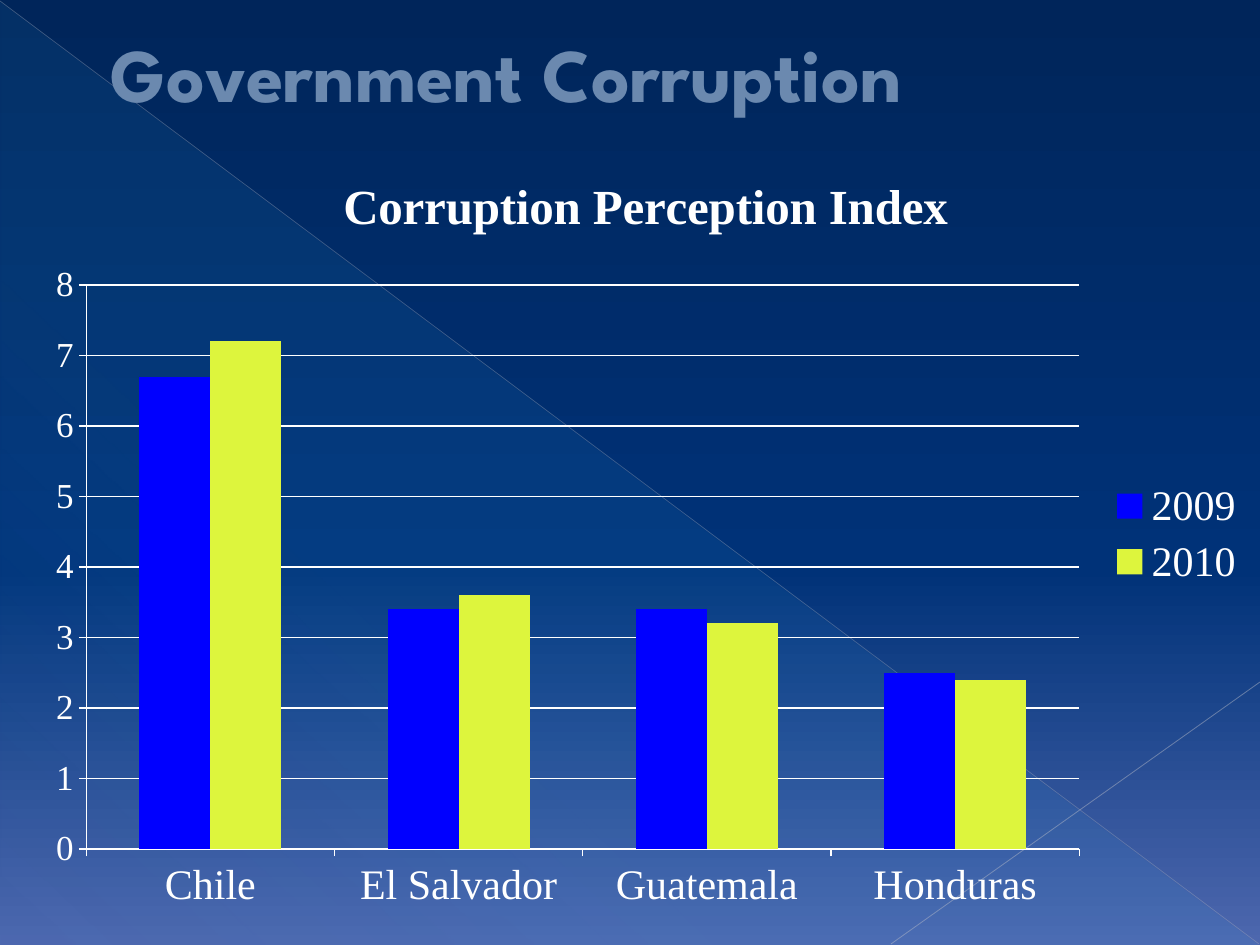
from lxml.etree import SubElement
from pptx import Presentation
from pptx.chart.data import CategoryChartData
from pptx.dml.color import RGBColor
from pptx.enum.chart import XL_CHART_TYPE, XL_LEGEND_POSITION, XL_TICK_MARK
from pptx.enum.shapes import MSO_CONNECTOR, MSO_SHAPE
from pptx.enum.text import MSO_ANCHOR, MSO_AUTO_SIZE, PP_ALIGN
from pptx.oxml import parse_xml
from pptx.oxml.ns import nsdecls, qn
from pptx.util import Emu, Pt

EMU_PER_PX = 914400 / 126
HEADING_FONT = "League Spartan"
CHART_FONT = "Times New Roman"
COLORS = {
    "navy": "00255A",
    "royal": "003278",
    "periwinkle": "4D67AE",
    "sky": "38ABED",
    "long_line": "B0B5C3",
    "short_line": "B9BDC9",
    "title": "6B89AF",
    "title_edge": "083E5D",
    "white": "FFFFFF",
    "blue": "0000FF",
    "lime": "DDF53D",
}
COUNTRIES = ["Chile", "El Salvador", "Guatemala", "Honduras"]
SERIES = [
    ("2009", [6.7, 3.4, 3.4, 2.5], "blue"),
    ("2010", [7.2, 3.6, 3.2, 2.4], "lime"),
]


def px(length):
    """Turn pixels into EMU."""
    return Emu(round(length * EMU_PER_PX))


def color(name):
    """Look up a named colour."""
    return RGBColor.from_string(COLORS[name])


def set_alpha(element, percent):
    """Set the opacity of the first colour inside an element."""
    value = element.find(".//" + qn("a:srgbClr"))
    SubElement(value, qn("a:alpha"), val=str(percent * 1000))


def set_gradient(fill, element, stops, angle):
    """Fill with a linear gradient of (position, colour, opacity) stops."""
    fill.gradient()
    gradient = element.find(".//" + qn("a:gradFill"))
    for child in list(gradient):
        gradient.remove(child)
    stop_list = SubElement(gradient, qn("a:gsLst"))
    for position, name, opacity in stops:
        stop = SubElement(stop_list, qn("a:gs"), pos=str(position * 1000))
        SubElement(stop, qn("a:srgbClr"), val=COLORS[name])
        if opacity < 100:
            set_alpha(stop, opacity)
    SubElement(gradient, qn("a:lin"), ang=str(angle * 60000), scaled="0")


def format_font(font, size, name=CHART_FONT, fill="white", bold=False):
    """Apply a typeface, size, weight and colour."""
    font.name = name
    font.size = Pt(size)
    font.bold = bold
    font.color.rgb = color(fill)


def add_triangle(page, left, top, width, height):
    """Add the translucent corner triangle."""
    triangle = page.shapes.add_shape(
        MSO_SHAPE.RIGHT_TRIANGLE, px(left), px(top), px(width), px(height)
    )
    triangle.shadow.inherit = False
    triangle.line.fill.background()
    stops = [(0, "sky", 10), (70, "sky", 8), (100, "sky", 1)]
    set_gradient(triangle.fill, triangle._element.spPr, stops, 133)


def add_line(page, start, end, name, width, opacity):
    """Add a translucent straight line."""
    line = page.shapes.add_connector(
        MSO_CONNECTOR.STRAIGHT, *map(px, start), *map(px, end)
    )
    line.line.color.rgb = color(name)
    line.line.width = Pt(width)
    properties = line._element.spPr
    set_alpha(properties, opacity)
    SubElement(properties, qn("a:effectLst"))


def add_title(page, text, left, top, width, height, indent):
    """Place and format the title in front of the backdrop."""
    title = page.shapes.title
    title.left, title.top = px(left), px(top)
    title.width, title.height = px(width), px(height)
    page.shapes._spTree.append(title._element)
    frame = title.text_frame
    frame.word_wrap = True
    frame.auto_size = MSO_AUTO_SIZE.NONE
    frame.vertical_anchor = MSO_ANCHOR.MIDDLE
    para = frame.paragraphs[0]
    para.alignment = PP_ALIGN.LEFT
    properties = para._p.get_or_add_pPr()
    properties.set("marL", str(px(indent)))
    properties.set("indent", "0")
    span = para.add_run()
    span.text = text
    format_font(span.font, 43.2, HEADING_FONT, "title", bold=True)
    edge = parse_xml(
        f'<a:ln {nsdecls("a")} w="6350"><a:solidFill>'
        f'<a:srgbClr val="{COLORS["title_edge"]}"/></a:solidFill></a:ln>'
    )
    span._r.get_or_add_rPr().insert(0, edge)


def format_axis(axis, size):
    """Give an axis white lines, outer ticks and label text."""
    axis.major_tick_mark = XL_TICK_MARK.OUTSIDE
    axis.minor_tick_mark = XL_TICK_MARK.NONE
    axis.format.line.color.rgb = color("white")
    axis.format.line.width = Pt(0.75)
    format_font(axis.tick_labels.font, size)


def set_plot_area(chart, **fractions):
    """Fix the inner plot area as fractions of the chart."""
    area = chart._chartSpace.chart.plotArea
    for old in area.findall(qn("c:layout")):
        area.remove(old)
    layout = parse_xml(f'<c:layout {nsdecls("c")}/>')
    manual = SubElement(layout, qn("c:manualLayout"))
    SubElement(manual, qn("c:layoutTarget"), val="inner")
    for side in "xy":
        SubElement(manual, qn(f"c:{side}Mode"), val="edge")
    for key, value in fractions.items():
        SubElement(manual, qn(f"c:{key}"), val=str(value))
    area.insert(0, layout)


def add_column_chart(page, title, left, top, width, height):
    """Add the clustered columns with title, axes and legend."""
    data = CategoryChartData()
    data.categories = COUNTRIES
    for name, values, _ in SERIES:
        data.add_series(name, values)
    chart = page.shapes.add_chart(
        XL_CHART_TYPE.COLUMN_CLUSTERED, px(left), px(top), px(width), px(height), data
    ).chart
    format_font(chart.font, 10, HEADING_FONT)
    chart.has_title = True
    chart.chart_title.include_in_layout = False
    span = chart.chart_title.text_frame.paragraphs[0].add_run()
    span.text = title
    format_font(span.font, 28, bold=True)

    plot = chart.plots[0]
    plot.gap_width, plot.overlap = 150, 0
    plot.vary_by_categories = False
    for series, (_, _, fill) in zip(plot.series, SERIES):
        series.format.fill.solid()
        series.format.fill.fore_color.rgb = color(fill)

    format_axis(chart.category_axis, 24)
    axis = chart.value_axis
    format_axis(axis, 20)
    axis.minimum_scale, axis.maximum_scale, axis.major_unit = 0, 8, 1
    axis.major_gridlines.format.line.color.rgb = color("white")
    axis.major_gridlines.format.line.width = Pt(0.75)

    chart.has_legend = True
    chart.legend.position = XL_LEGEND_POSITION.RIGHT
    chart.legend.include_in_layout = False
    format_font(chart.legend.font, 24)
    set_plot_area(chart, x=0.045, y=0.181, w=0.808, h=0.723)


def main():
    """Build the slide and save the deck."""
    deck = Presentation()
    deck.slide_width, deck.slide_height = px(1260), px(945)
    page = deck.slides.add_slide(deck.slide_layouts[5])
    stops = [(0, "navy", 100), (60, "royal", 100), (100, "periwinkle", 100)]
    set_gradient(page.background.fill, page._element, stops, 90)
    add_triangle(page, 1, 2, 1258, 943)
    add_line(page, (0, 1), (1259, 944), "long_line", 0.39, 35)
    add_line(page, (1260, 682), (891, 944), "short_line", 0.47, 45)
    add_title(page, "Government Corruption", 31, 0, 1045, 144, indent=67)
    add_column_chart(page, "Corruption Perception Index", 31, 144, 1229, 780)
    deck.save("out.pptx")


if __name__ == "__main__":
    main()
